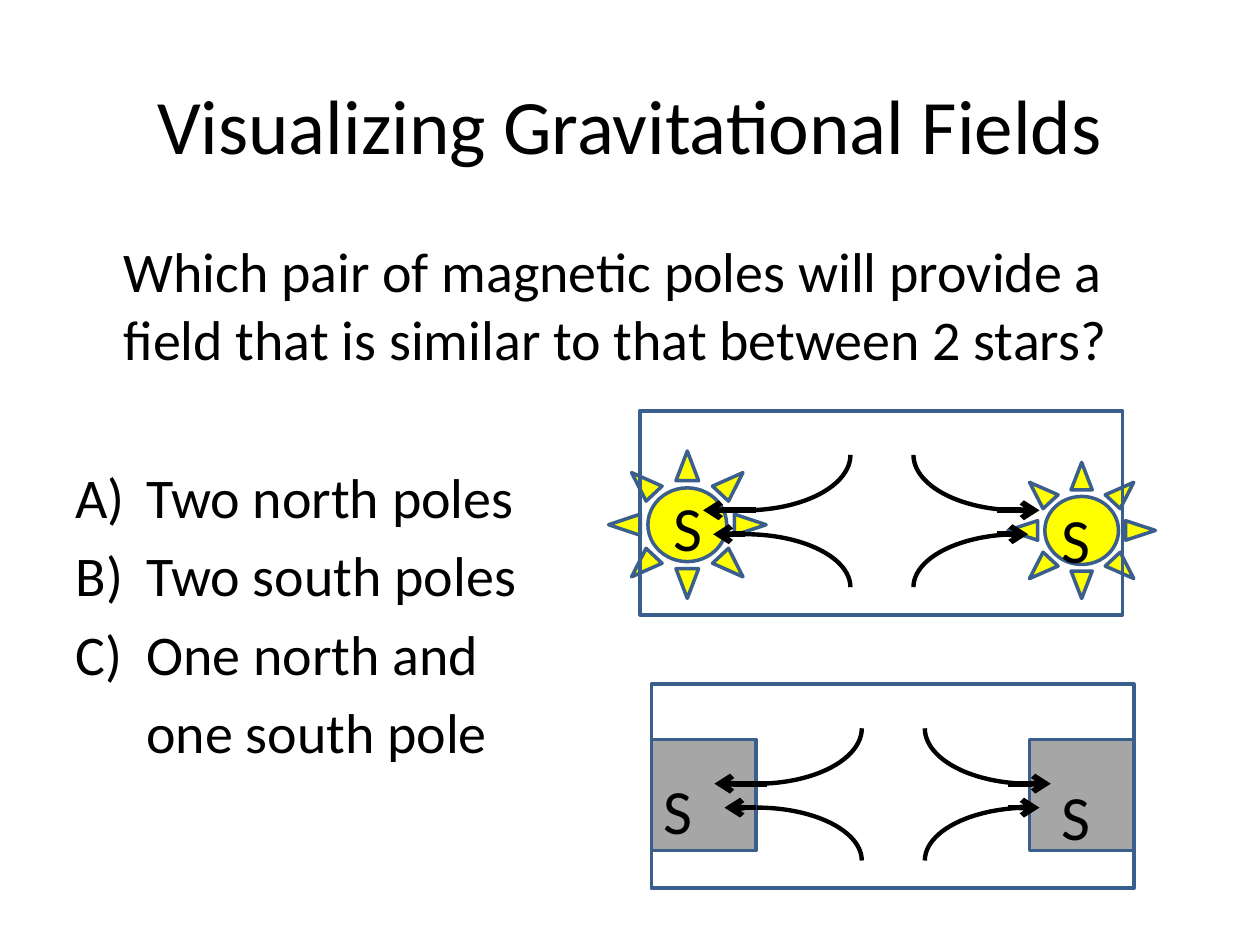
from lxml import etree
from pptx import Presentation
from pptx.dml.color import RGBColor
from pptx.enum.shapes import MSO_CONNECTOR, MSO_SHAPE
from pptx.enum.text import PP_ALIGN
from pptx.oxml.ns import qn
from pptx.util import Inches, Pt

ARC, RECTANGLE, SUN = MSO_SHAPE.ARC, MSO_SHAPE.RECTANGLE, MSO_SHAPE.SUN
STRAIGHT = MSO_CONNECTOR.STRAIGHT
CENTER = PP_ALIGN.CENTER
FONT = "Calibri"
COLORS = {"text": "000000", "outline": "3A5F8C", "star": "FFFF00",
          "magnet": "A6A6A6", "field": "000000"}

# Panel geometry, in inches from the corner of each frame
FRAME_SIZE = (3.83, 1.62)
ARC_WIDTH, ARC_STEP = 1.67, 2.17
UPPER_ARC, LOWER_ARC = (-0.09, 0.88), (0.98, 0.84)  # top, height
QUARTER = 54  # a quarter turn in arc adjustment units
ARROWS = [(0.92, 0.5, 0.79), (0.83, 0.58, 0.98),  # from x, to x, y
          (2.83, 3.08, 0.98), (2.83, 3.17, 0.79)]


def color(name):
    return RGBColor.from_string(COLORS[name])


def place(shape, left, top, width, height):
    shape.left, shape.top = Inches(left), Inches(top)
    shape.width, shape.height = Inches(width), Inches(height)


def format_runs(para, size):
    for run in para.runs:
        run.font.name, run.font.size = FONT, Pt(size)
        run.font.color.rgb = color("text")


def set_indent(para, margin, hanging=0, numbered=False):
    properties = para._p.get_or_add_pPr()
    properties.set("marL", str(Inches(margin)))
    properties.set("indent", str(-Inches(hanging)))
    if numbered:
        bullet = etree.SubElement(properties, qn("a:buAutoNum"))
        bullet.set("type", "alphaUcParenR")
    else:
        etree.SubElement(properties, qn("a:buNone"))


def add_shape(group, kind, box, line, width, fill=None):
    shape = group.shapes.add_shape(kind, *map(Inches, box))
    shape.shadow.inherit = False
    shape.line.color.rgb, shape.line.width = color(line), Pt(width)
    if fill:
        shape.fill.solid()
        shape.fill.fore_color.rgb = color(fill)
    else:
        shape.fill.background()
    return shape


def add_label(group, text, box):
    label = group.shapes.add_textbox(*map(Inches, box))
    label.text_frame.word_wrap = True
    label.text_frame.text = text
    format_runs(label.text_frame.paragraphs[0], 36)


def add_arrow(group, start_x, end_x, y):
    arrow = group.shapes.add_connector(
        STRAIGHT, Inches(start_x), Inches(y), Inches(end_x), Inches(y))
    arrow.line.color.rgb, arrow.line.width = color("field"), Pt(3.25)
    head = etree.SubElement(arrow.line._get_or_add_ln(), qn("a:tailEnd"))
    head.set("type", "arrow")
    etree.SubElement(arrow._element.spPr, qn("a:effectLst"))


def add_arc(group, box, quadrant):
    """Draw one quarter of an ellipse, quadrants clockwise from lower right."""
    arc = add_shape(group, ARC, box, "field", 2.5)
    arc.adjustments[0] = quadrant * QUARTER
    arc.adjustments[1] = (quadrant + 1) % 4 * QUARTER


def add_panel(page, left, top, kind, fill, bodies, labels):
    group = page.shapes.add_group_shape()
    # Attracting bodies and their pole letters
    for box in bodies:
        add_shape(group, kind, box, "outline", 2, fill)
    for box in labels:
        add_label(group, "S", box)
    add_shape(group, RECTANGLE, (left, top, *FRAME_SIZE), "outline", 2)
    # Field lines: curved part, then straight arrow
    for column, quadrants in enumerate([(0, 3), (1, 2)]):
        for (offset, height), quadrant in zip((UPPER_ARC, LOWER_ARC), quadrants):
            add_arc(group, (left + column * ARC_STEP, top + offset,
                            ARC_WIDTH, height), quadrant)
    for start_x, end_x, y in ARROWS:
        add_arrow(group, left + start_x, left + end_x, top + y)


def fill_title(page):
    title = page.shapes.title
    place(title, 0.5, 0.3, 9, 1.37)
    title.text_frame.text = "Visualizing Gravitational Fields"
    para = title.text_frame.paragraphs[0]
    para.alignment = CENTER
    format_runs(para, 44)


def fill_body(page):
    body = page.placeholders[1]
    place(body, 0.5, 1.83, 9, 5.25)
    body.text_frame.text = "\n".join([
        "Which pair of magnetic poles will provide a field that is similar "
        "to that between 2 stars?",
        "Two north poles", "Two south poles", "One north and", "one south pole"])
    question, *answers, last_line = body.text_frame.paragraphs
    answers[0].space_before = Pt(52)
    set_indent(question, 0.38)
    for answer in answers:
        set_indent(answer, 0.56, 0.56, numbered=True)
    set_indent(last_line, 0.56)
    for para in body.text_frame.paragraphs:
        format_runs(para, 32)


def main():
    deck = Presentation()
    deck.slide_width, deck.slide_height = Inches(10), Inches(7.5)
    page = deck.slides.add_slide(deck.slide_layouts[1])
    fill_title(page)
    fill_body(page)
    # Magnets
    add_panel(page, 5.17, 5.43, RECTANGLE, "magnet",
              [(x, 5.87, 0.83, 0.88) for x in (5.17, 8.17)],
              [(5.17, 6.07, 0.75, 0.42), (8.33, 6.12, 0.75, 0.42)])
    # Stars
    add_panel(page, 5.08, 3.26, SUN, "star",
              [(8, 3.67, 1.17, 1.08), (4.83, 3.58, 1.25, 1.17)],
              [(5.25, 3.83, 0.58, 0.71), (8.33, 3.92, 0.67, 0.71)])
    deck.save("out.pptx")


if __name__ == "__main__":
    main()
